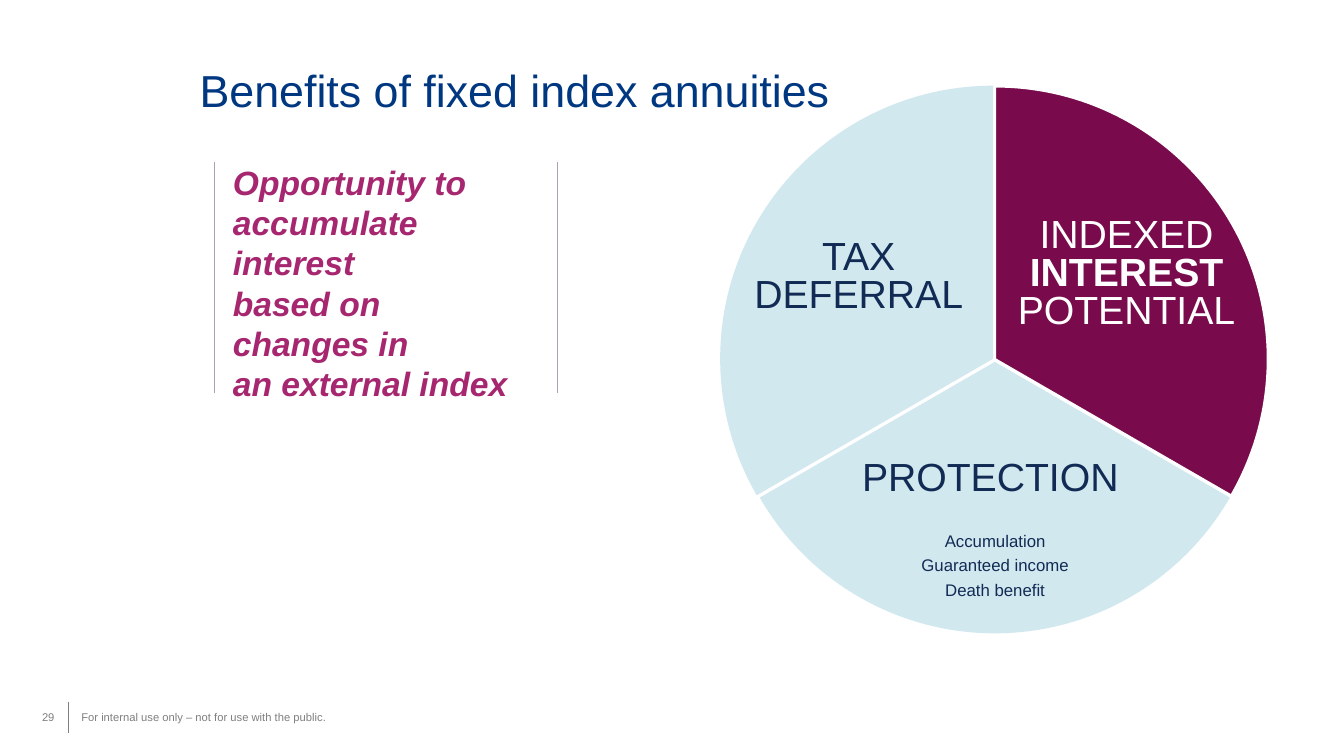
import math
from lxml import etree
from pptx import Presentation
from pptx.dml.color import RGBColor
from pptx.enum import shapes, text
from pptx.oxml import ns
from pptx.util import Cm, Pt

FONT = "Arial"
NAVY, BLUE, PLUM, PINK = "122B54", "003781", "790B4D", "A6276F"
PALE, WHITE, GREY, LILAC = "B5DAE6", "FFFFFF", "7F7F7F", "AF9EB9"
INSET = (0.25, 0.13, 0.25, 0.13)  # left, top, right, bottom, cm

TITLE = "Benefits of fixed index annuities"
QUOTE = ["Opportunity to ", "accumulate interest ", "based on changes in ", "an external index"]
FOOTER, NUMBER = "For internal use only – not for use with the public.", "29"

# centre x, centre y, radius, arc angles (clockwise from 3 o'clock), fill, opacity %, outline
SECTORS = [
    (25.07, 9.12, 6.84, (30, 90, 150), PALE, 61, None),
    (25.08, 9.05, 6.87, (-90, 0, 30), PLUM, 100, WHITE),
    (25.03, 9.04, 6.88, (150, 180, 270), PALE, 61, None),
]
# box, runs of (text, bold), colour
SECTOR_LABELS = [
    ((18.53, 5.93, 6.22, 2.18), [("TAX DEFERRAL", False)], NAVY),
    ((25.33, 5.38, 6.12, 3.12),
     [("INDEXED ", False), ("INTEREST", True), (" POTENTIAL", False)], WHITE),
    ((20.09, 11.49, 10.01, 1.22), [("PROTECTION ", False)], NAVY),
]
PROTECTIONS = ["Accumulation", "Guaranteed income", "Death benefit"]
PROTECTION_BOX, PROTECTION_STEP = (21.55, 13.24, 7.06, 0.76), 0.62
# x, top, bottom, colour, width pt
RULES = [
    (5.41, 4.07, 9.91, LILAC, 1),
    (14.05, 4.07, 9.91, LILAC, 1),
    (1.73, 17.68, 18.47, GREY, 0.75),
]


def color(fmt, value):
    fmt.rgb = RGBColor.from_string(value)


def add_run(p, content, size, value, bold=False, italic=False):
    r = p.add_run()
    r.text = content
    r.font.name, r.font.size = FONT, Pt(size)
    r.font.bold, r.font.italic = bold, italic
    color(r.font.color, value)


def add_box(s, box, inset=INSET, middle=False, centered=False, spacing=None):
    """Add an empty text box and return its first paragraph."""
    tf = s.shapes.add_textbox(*map(Cm, box)).text_frame
    tf.word_wrap = True
    tf.margin_left, tf.margin_top, tf.margin_right, tf.margin_bottom = map(Cm, inset)
    tf.vertical_anchor = text.MSO_ANCHOR.MIDDLE if middle else text.MSO_ANCHOR.TOP
    p = tf.paragraphs[0]
    p.alignment = text.PP_ALIGN.CENTER if centered else text.PP_ALIGN.LEFT
    p.line_spacing = spacing
    return p


def arc_points(cx, cy, radius, angles):
    """Return the arc's start, then two control points and an end for each curve."""
    def point(angle, pull=0):
        cos, sin = math.cos(angle), math.sin(angle)
        return (Cm(cx + radius * (cos - pull * sin)), Cm(cy + radius * (sin + pull * cos)))

    stops = [math.radians(a) for a in angles]
    points = [point(stops[0])]
    for a, b in zip(stops, stops[1:]):
        pull = 4 / 3 * math.tan((b - a) / 4)
        points += [point(a, pull), point(b, -pull), point(b)]
    return points


def add_sector(s, cx, cy, radius, angles, fill, opacity, outline):
    builder = s.shapes.build_freeform(Cm(cx), Cm(cy))
    builder.add_line_segments(arc_points(cx, cy, radius, angles), close=True)
    sp = builder.convert_to_shape()
    # Each three segments after the first edge become one Bézier curve.
    segments = list(sp._element.iter(ns.qn("a:lnTo")))[1:]
    for i in range(0, 3 * (len(angles) - 1), 3):
        curve = etree.Element(ns.qn("a:cubicBezTo"))
        segments[i].addprevious(curve)
        for segment in segments[i:i + 3]:
            curve.append(segment[0])
            segment.getparent().remove(segment)
    sp.shadow.inherit = False
    sp.fill.solid()
    color(sp.fill.fore_color, fill)
    if opacity < 100:
        rgb = sp._element.spPr.find(".//" + ns.qn("a:srgbClr"))
        etree.SubElement(rgb, ns.qn("a:alpha")).set("val", str(opacity * 1000))
    if outline:
        color(sp.line.color, outline)
        sp.line.width = Pt(1.5)
    else:
        sp.line.fill.background()


def add_rule(s, x, top, bottom, value, width):
    line = s.shapes.add_connector(
        shapes.MSO_CONNECTOR.STRAIGHT, Cm(x), Cm(top), Cm(x), Cm(bottom))
    color(line.line.color, value)
    line.line.width = Pt(width)
    etree.SubElement(line._element.spPr, ns.qn("a:effectLst"))


def main():
    prs = Presentation()
    prs.slide_width, prs.slide_height = Cm(33.87), Cm(19.05)
    s = prs.slides.add_slide(prs.slide_layouts[6])

    add_run(add_box(s, (2.05, 17.75, 30.25, 0.66), (0, 0.15, 0.3, 0.15)), FOOTER, 8, GREY)
    add_run(add_box(s, (1.06, 17.57, 1.02, 1.02), (0, 0.15, 0, 0.15), middle=True),
            NUMBER, 8, GREY)
    add_run(add_box(s, (4.78, 0.74, 26.67, 3.02), middle=True), TITLE, 32, BLUE)

    p = add_box(s, (5.87, 4.07, 7.26, 5.46), (0, 0, 0, 0), spacing=1.0)
    for i, line in enumerate(QUOTE):
        if i:
            p.add_line_break()
        add_run(p, line, 24, PINK, bold=True, italic=True)

    for sector in SECTORS:
        add_sector(s, *sector)
    for box, runs, value in SECTOR_LABELS:
        p = add_box(s, box, centered=True, spacing=0.8)
        for content, bold in runs:
            add_run(p, content, 28, value, bold)

    left, top, width, height = PROTECTION_BOX
    for i, name in enumerate(PROTECTIONS):
        box = (left, top + i * PROTECTION_STEP, width, height)
        add_run(add_box(s, box, centered=True), name, 12, NAVY)

    for rule in RULES:
        add_rule(s, *rule)
    prs.save("out.pptx")


if __name__ == "__main__":
    main()
